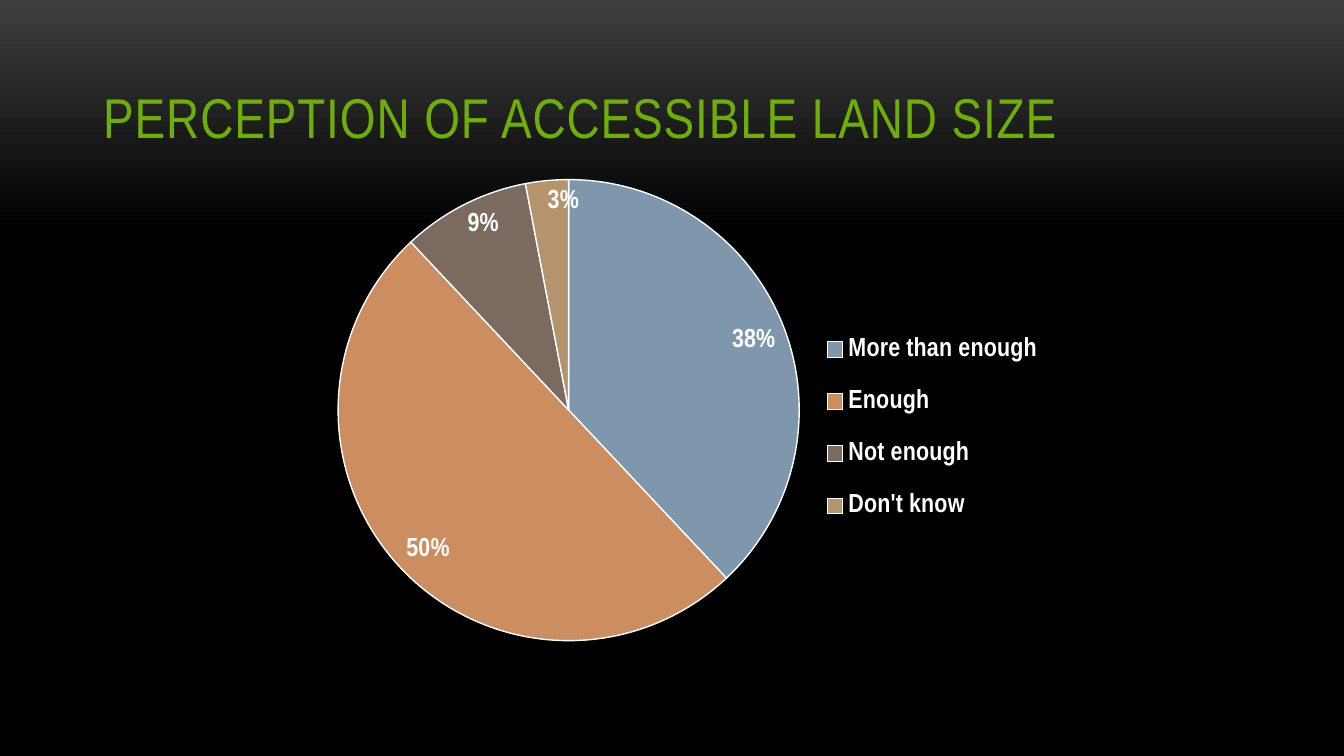
from lxml.etree import SubElement
from pptx import Presentation
from pptx.chart.data import CategoryChartData as ChartData
from pptx.dml.color import RGBColor as RGB
from pptx.enum.chart import XL_CHART_TYPE as ChartType
from pptx.enum.chart import XL_LABEL_POSITION as LabelPosition
from pptx.enum.chart import XL_LEGEND_POSITION as LegendPosition
from pptx.enum.text import MSO_ANCHOR as Anchor
from pptx.oxml import parse_xml
from pptx.oxml.ns import nsdecls, qn
from pptx.util import Inches, Pt

TITLE = "PERCEPTION OF ACCESSIBLE LAND SIZE"
SLIDE_WIDTH = Inches(10)
SLIDE_HEIGHT = SLIDE_WIDTH * 9 // 16
TITLE_BOX = (0.67, 0.22, 8.67, 0.94)
CHART_BOX = (1.83, 1.15, 6.08, 3.73)
PLOT_AREA = (0.09, 0.05, 0.61, 0.92)
LEGEND_AREA = (0.7, 0.31, 0.28, 0.47)
ANSWERS = [
    ("More than enough", 38, "7E97AD"),
    ("Enough", 50, "CC8E60"),
    ("Not enough", 9, "7A6A60"),
    ("Don't know", 3, "B4936D"),
]
THEME = {
    "font": "Arial Narrow",
    "title": {"size": Pt(30), "color": "6EAF05", "bold": False},
    "chart": {"size": Pt(18), "color": "FFFFFF"},
    "label": {"size": Pt(14), "color": "FFFFFF", "bold": True},
    "outline": "FFFFFF",
    "backdrop": [(0, "3F3F3F"), (0.31, "000000")],
}


def style_font(font, formats):
    """Apply the theme typeface and a dict of formats to a font."""
    for name, value in {"name": THEME["font"], **formats}.items():
        if name == "color":
            font.color.rgb = RGB.from_string(value)
        else:
            setattr(font, name, value)


def place_part(element, index, area, inner=False):
    """Give a chart part a manual layout in fractions of the chart."""
    for layout in element.findall(qn("c:layout")):
        element.remove(layout)
    layout = parse_xml(f"<c:layout {nsdecls('c')}><c:manualLayout/></c:layout>")
    settings = [("layoutTarget", "inner")] if inner else []
    settings += [("xMode", "edge"), ("yMode", "edge"), *zip("xywh", area)]
    for name, value in settings:
        SubElement(layout[0], qn(f"c:{name}")).set("val", str(value))
    element.insert(index, layout)


def paint_background(slide):
    """Fill the slide with the vertical backdrop gradient."""
    fill = slide.background.fill
    fill.gradient()
    fill.gradient_angle = 270
    for stop, (position, color) in zip(fill.gradient_stops, THEME["backdrop"]):
        stop.position = position
        stop.color.rgb = RGB.from_string(color)


def add_title(slide):
    """Add the bottom-anchored heading."""
    frame = slide.shapes.add_textbox(*map(Inches, TITLE_BOX)).text_frame
    frame.word_wrap = True
    frame.vertical_anchor = Anchor.BOTTOM
    run = frame.paragraphs[0].add_run()
    run.text = TITLE
    style_font(run.font, THEME["title"])
    run.font._element.set("spc", "50")


def add_pie(slide):
    """Add the pie chart with its labels and legend."""
    data = ChartData()
    data.categories = [answer for answer, _, _ in ANSWERS]
    data.add_series("Series 1", [share for _, share, _ in ANSWERS])
    chart = slide.shapes.add_chart(ChartType.PIE, *map(Inches, CHART_BOX), data).chart
    chart.has_title = False
    chart.has_legend = True
    style_font(chart.font, THEME["chart"])
    legend = chart.legend
    legend.position = LegendPosition.RIGHT
    legend.include_in_layout = False
    style_font(legend.font, THEME["label"])
    plot = chart.plots[0]
    plot.vary_by_categories = True
    series = plot.series[0]
    label_formats = {
        "show_percentage": True,
        "show_value": False,
        "number_format": "0%",
        "number_format_is_linked": False,
        "position": LabelPosition.INSIDE_END,
    }
    for name, value in label_formats.items():
        setattr(series.data_labels, name, value)
    style_font(series.data_labels.font, THEME["label"])
    for index, (_, _, color) in enumerate(ANSWERS):
        slice_format = series.points[index].format
        slice_format.fill.solid()
        slice_format.fill.fore_color.rgb = RGB.from_string(color)
        slice_format.line.color.rgb = RGB.from_string(THEME["outline"])
        slice_format.line.width = Pt(0.75)
    plot_area = chart._chartSpace.find(".//" + qn("c:plotArea"))
    place_part(plot_area, 0, PLOT_AREA, inner=True)
    place_part(legend._element, 1, LEGEND_AREA)


def main():
    """Build the slide and save it."""
    presentation = Presentation()
    presentation.slide_width = SLIDE_WIDTH
    presentation.slide_height = SLIDE_HEIGHT
    slide = presentation.slides.add_slide(presentation.slide_layouts[6])
    paint_background(slide)
    add_title(slide)
    add_pie(slide)
    presentation.save("out.pptx")


if __name__ == "__main__":
    main()
